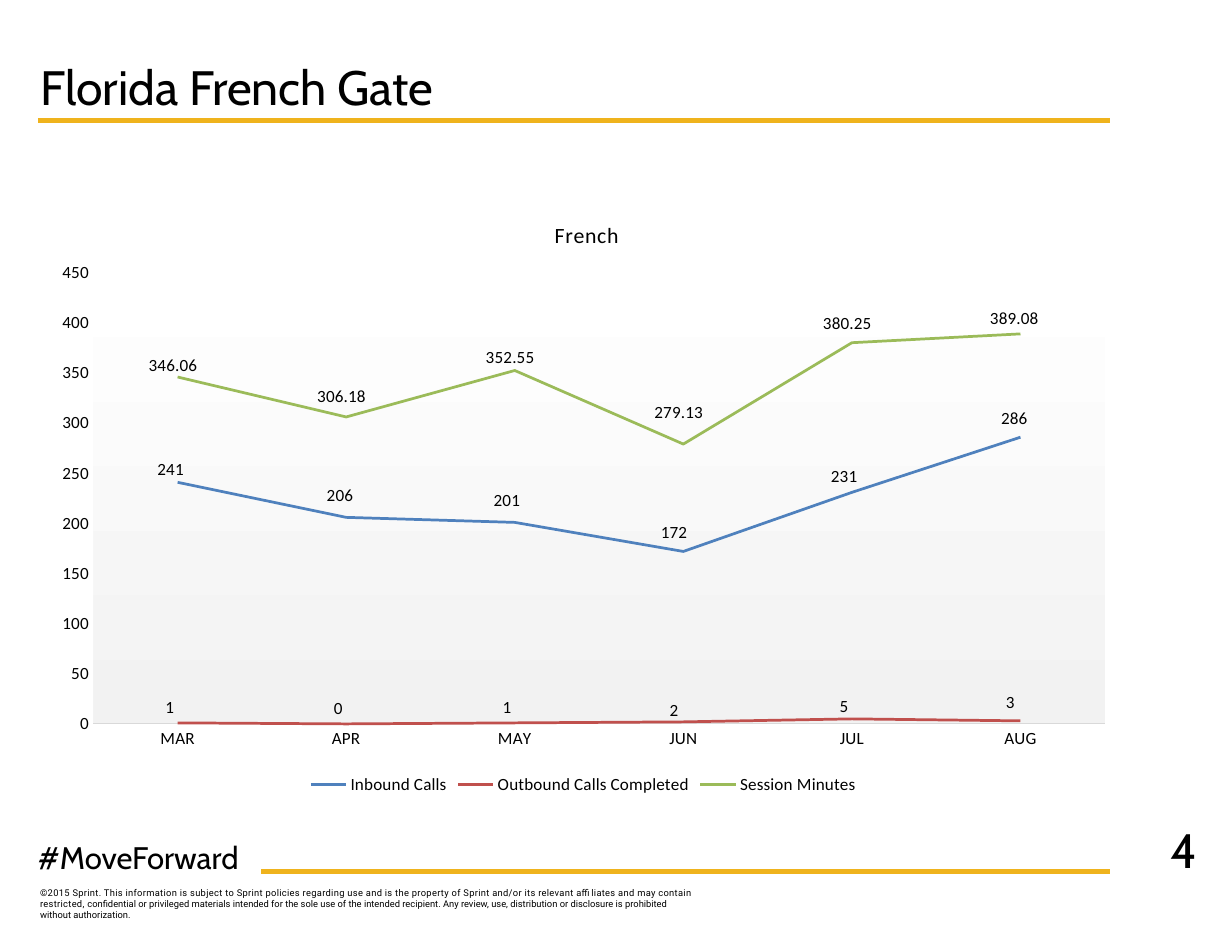
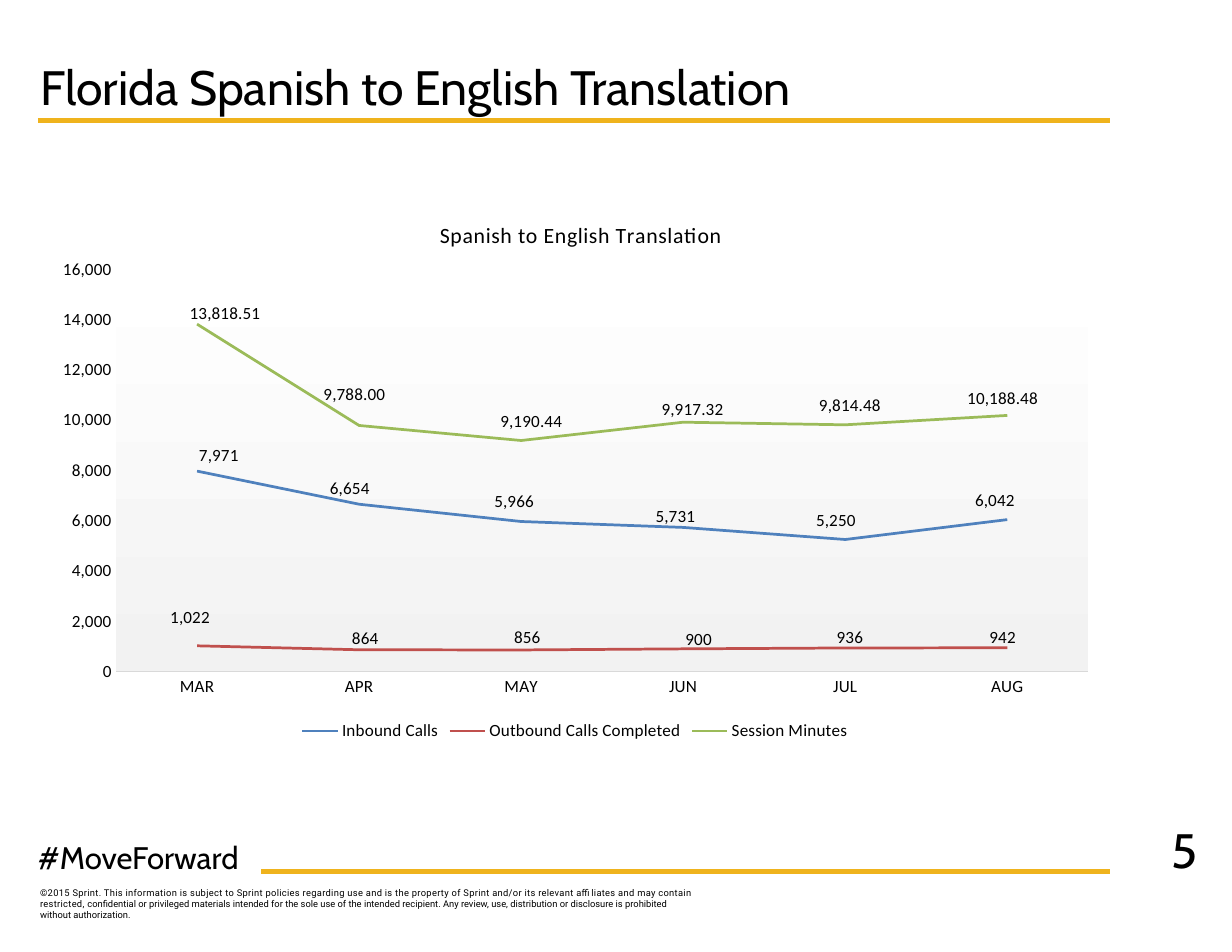
from dataclasses import dataclass
from typing import Optional

import pptx
import pptx.chart.chart
import pptx.chart.data
import pptx.chart.series
import pptx.dml.color
import pptx.enum.chart
import pptx.enum.shapes
import pptx.enum.text
import pptx.oxml
import pptx.oxml.ns
import pptx.slide
import pptx.text.text
import pptx.util
from pptx.dml.color import RGBColor
from pptx.util import Cm

# Shared look
GOLD = RGBColor(0xEF, 0xB3, 0x1D)
BLACK = RGBColor(0x00, 0x00, 0x00)
AXIS_GREY = RGBColor(0xD9, 0xD9, 0xD9)
PLOT_TOP = RGBColor(0xFF, 0xFF, 0xFF)
PLOT_BOTTOM = RGBColor(0xF2, 0xF2, 0xF2)
BLUE = RGBColor(0x4F, 0x81, 0xBD)
RED = RGBColor(0xC0, 0x50, 0x4D)
GREEN = RGBColor(0x9B, 0xBB, 0x59)
HEADING_FONT, CHART_FONT, LEGAL_FONT = "Cabin", "Calibri", "Roboto"

MONTHS = ["MAR", "APR", "MAY", "JUN", "JUL", "AUG"]
HASHTAG = "#MoveForward"
COPYRIGHT_START = (
    "©2015 Sprint. This information is subject to Sprint policies regarding use and is the "
    "property of Sprint and/or its relevant affiliates and may contain restricted, "
)
COPYRIGHT_END = (
    "confidential or privileged materials intended for the sole use of the intended recipient. "
    "Any review, use, distribution or disclosure is prohibited without authorization."
)


@dataclass(frozen=True)
class Box:
    left: float
    top: float
    width: float
    height: float

    def lengths(self) -> tuple[Cm, Cm, Cm, Cm]:
        return Cm(self.left), Cm(self.top), Cm(self.width), Cm(self.height)


@dataclass(frozen=True)
class Rule:
    left: float
    right: float
    top: float


@dataclass(frozen=True)
class Measure:
    """One line; label shifts are points right and down from each data point."""
    values: list[float]
    label_shifts: list[tuple[float, float]]


@dataclass(frozen=True)
class Report:
    number: int
    title: str
    chart_title: str
    chart_box: Box
    title_corner: tuple[float, float]  # fractions of the chart
    plot: Box  # fractions of the chart
    axis_maximum: int
    axis_step: int
    measures: list[Measure]


# Name, colour and number format of each line, in drawing order
LINE_STYLES = [
    ("Inbound Calls", BLUE, "#,##0"),
    ("Outbound Calls Completed", RED, "#,##0"),
    ("Session Minutes", GREEN, "#,##0.00"),
]
RULES = [Rule(0.86, 25.17, 2.74), Rule(5.92, 25.17, 19.76)]
TITLE_BOX = Box(0.91, 0.61, 24.26, 2.01)
NUMBER_BOX = Box(23.93, 18.67, 3.51, 1.19)
COPYRIGHT_BOX = Box(0.71, 20.02, 15.24, 0.97)
HASHTAG_BOX = Box(0.66, 18.92, 15.24, 1.07)

REPORTS = [
    Report(
        4, "Florida French Gate", "French", Box(0.91, 4.34, 24.64, 13.79),
        (0.47, 0.04), Box(0.049, 0.134, 0.931, 0.742), 450, 50,
        [
            Measure([241, 206, 201, 172, 231, 286],
                    [(-4.5, -8), (-4, -14), (-5, -14), (-6, -12), (-5, -10), (-4, -12)]),
            Measure([1, 0, 1, 2, 5, 3],
                    [(-5, -10), (-5, -10), (-5, -10), (-6, -7), (-5, -8), (-6.5, -12)]),
            Measure([346.06, 306.18, 352.55, 279.13, 380.25, 389.08],
                    [(-3, -7), (-3, -13), (-3, -8), (-3, -20), (-3, -12), (-4, -10)]),
        ],
    ),
    Report(
        5, "Florida Spanish to English Translation", "Spanish to English Translation",
        Box(0.91, 4.32, 24.26, 12.6),
        (0.37, 0.045), Box(0.071, 0.142, 0.909, 0.724), 16000, 2000,
        [
            Measure([7971, 6654, 5966, 5731, 5250, 6042],
                    [(14, -10), (-6, -10), (-4.5, -13), (-5, -7), (-6, -12), (-8, -12)]),
            Measure([1022, 864, 856, 900, 936, 942],
                    [(-4.5, -18), (4, -7), (4, -8), (10, -6), (3, -6.5), (-3, -6.5)]),
            Measure([13818.51, 9788, 9190.44, 9917.32, 9814.48, 10188.48],
                    [(18, -7), (-3, -20), (6.5, -12), (6, -8), (3, -12), (-3, -11)]),
        ],
    ),
]


def format_run(run: pptx.text.text._Run, size: float, font_name: str, spacing: int = 0) -> None:
    run.font.size = pptx.util.Pt(size)
    run.font.name = font_name
    run.font.color.rgb = BLACK
    if spacing:
        run._r.get_or_add_rPr().set("spc", str(spacing))


def set_margins(text_frame: pptx.text.text.TextFrame, across: float, down: float) -> None:
    text_frame.margin_left = text_frame.margin_right = Cm(across)
    text_frame.margin_top = text_frame.margin_bottom = Cm(down)


def add_text(slide: pptx.slide.Slide, box: Box, text: str, size: float,
             font_name: str) -> pptx.text.text.TextFrame:
    text_frame = slide.shapes.add_textbox(*box.lengths()).text_frame
    text_frame.word_wrap = True
    set_margins(text_frame, 0.2, 0.1)
    text_frame.text = text
    format_run(text_frame.paragraphs[0].runs[0], size, font_name)
    return text_frame


def add_rule(slide: pptx.slide.Slide, rule: Rule) -> None:
    connector = slide.shapes.add_connector(
        pptx.enum.shapes.MSO_CONNECTOR.STRAIGHT,
        Cm(rule.left), Cm(rule.top), Cm(rule.right), Cm(rule.top))
    connector.line.color.rgb = GOLD
    connector.line.width = pptx.util.Pt(3)
    properties = connector._element.spPr
    properties.append(pptx.oxml.parse_xml(
        f"<a:effectLst {pptx.oxml.ns.nsdecls('a')}/>"))


def add_frame(slide: pptx.slide.Slide, report: Report) -> None:
    """Title, gold rules, footer texts and page number."""
    for rule in RULES:
        add_rule(slide, rule)

    copyright_frame = add_text(slide, COPYRIGHT_BOX, COPYRIGHT_START, 6, LEGAL_FONT)
    paragraph = copyright_frame.paragraphs[0]
    format_run(paragraph.runs[0], 6, LEGAL_FONT, spacing=20)
    ending = paragraph.add_run()
    ending.text = COPYRIGHT_END
    format_run(ending, 6, LEGAL_FONT)

    add_text(slide, HASHTAG_BOX, HASHTAG, 20, HEADING_FONT)

    title = slide.shapes.title
    title.left, title.top, title.width, title.height = TITLE_BOX.lengths()
    title_frame = title.text_frame
    title_frame.text = report.title
    title_frame.auto_size = pptx.enum.text.MSO_AUTO_SIZE.NONE
    title_frame.vertical_anchor = pptx.enum.text.MSO_ANCHOR.BOTTOM
    set_margins(title_frame, 0, 0)
    title_frame.paragraphs[0].alignment = pptx.enum.text.PP_ALIGN.LEFT
    format_run(title_frame.paragraphs[0].runs[0], 31, HEADING_FONT)

    number_frame = add_text(slide, NUMBER_BOX, str(report.number), 31, HEADING_FONT)
    set_margins(number_frame, 0.28, 0.15)
    number_frame.vertical_anchor = pptx.enum.text.MSO_ANCHOR.MIDDLE
    number_frame.paragraphs[0].alignment = pptx.enum.text.PP_ALIGN.RIGHT


def set_layout(element, index: int, x: float, y: float,
               size: Optional[tuple[float, float]] = None, edge: bool = True) -> None:
    """Place a chart part by fractions of the chart."""
    for old_layout in element.xpath("c:layout"):
        element.remove(old_layout)
    entries = []
    if size:
        entries.append(("layoutTarget", "inner"))
    if edge:
        entries += [("xMode", "edge"), ("yMode", "edge")]
    entries += [("x", f"{x:.4f}"), ("y", f"{y:.4f}")]
    if size:
        entries += [("w", size[0]), ("h", size[1])]
    body = "".join(f'<c:{name} val="{value}"/>' for name, value in entries)
    element.insert(index, pptx.oxml.parse_xml(
        f"<c:layout {pptx.oxml.ns.nsdecls('c')}><c:manualLayout>{body}"
        "</c:manualLayout></c:layout>"))


def style_plot(chart: pptx.chart.chart.Chart, plot: Box) -> None:
    plot_area = chart._chartSpace.chart.plotArea
    set_layout(plot_area, 0, plot.left, plot.top, (plot.width, plot.height))
    plot_area.append(pptx.oxml.parse_xml(
        f"<c:spPr {pptx.oxml.ns.nsdecls('c', 'a')}><a:gradFill><a:gsLst>"
        f'<a:gs pos="0"><a:srgbClr val="{PLOT_TOP}"/></a:gs>'
        f'<a:gs pos="100000"><a:srgbClr val="{PLOT_BOTTOM}"/></a:gs>'
        '</a:gsLst><a:lin ang="5400000" scaled="0"/></a:gradFill></c:spPr>'))


def style_axes(chart: pptx.chart.chart.Chart, report: Report) -> None:
    for axis in (chart.category_axis, chart.value_axis):
        axis.has_major_gridlines = False
        axis.major_tick_mark = pptx.enum.chart.XL_TICK_MARK.NONE
        axis.minor_tick_mark = pptx.enum.chart.XL_TICK_MARK.NONE
    chart.category_axis.format.line.color.rgb = AXIS_GREY
    chart.category_axis.format.line.width = pptx.util.Pt(0.75)
    value_axis = chart.value_axis
    value_axis.format.line.fill.background()
    value_axis.minimum_scale = 0
    value_axis.maximum_scale = report.axis_maximum
    value_axis.major_unit = report.axis_step
    value_axis.tick_labels.number_format = "#,##0"
    value_axis.tick_labels.number_format_is_linked = False


def style_series(series: pptx.chart.series.LineSeries, measure: Measure, color: RGBColor,
                 number_format: str, box: Box) -> None:
    series.smooth = False
    series.marker.style = pptx.enum.chart.XL_MARKER_STYLE.NONE
    series.format.line.color.rgb = color
    series.format.line.width = pptx.util.Pt(1.75)

    labels = series.data_labels
    labels.show_value = True
    labels.number_format = number_format
    labels.number_format_is_linked = False
    for index in range(len(measure.values)):
        series.points[index].data_label.position = pptx.enum.chart.XL_LABEL_POSITION.CENTER
    for label, (right, down) in zip(labels._element.xpath("c:dLbl"), measure.label_shifts):
        set_layout(label, 1, right / Cm(box.width).pt, down / Cm(box.height).pt, edge=False)
    for leader_lines in labels._element.xpath("c:showLeaderLines"):
        leader_lines.set("val", "0")


def add_line_chart(slide: pptx.slide.Slide, report: Report) -> None:
    chart_data = pptx.chart.data.CategoryChartData()
    chart_data.categories = MONTHS
    for (name, _, number_format), measure in zip(LINE_STYLES, report.measures):
        chart_data.add_series(name, measure.values, number_format)
    chart = slide.shapes.add_chart(
        pptx.enum.chart.XL_CHART_TYPE.LINE, *report.chart_box.lengths(), chart_data).chart
    chart.font.name = CHART_FONT
    chart.font.size = pptx.util.Pt(11)
    chart.font.color.rgb = BLACK

    # Title and legend
    chart.has_title = True
    title_frame = chart.chart_title.text_frame
    title_frame.text = report.chart_title
    title_run = title_frame.paragraphs[0].runs[0]
    format_run(title_run, 14, CHART_FONT, spacing=30)
    title_run.font.bold = False
    set_layout(chart.chart_title._element, 1, *report.title_corner)
    chart.has_legend = True
    chart.legend.position = pptx.enum.chart.XL_LEGEND_POSITION.BOTTOM
    chart.legend.include_in_layout = False

    # Plot area, axes and lines
    style_plot(chart, report.plot)
    style_axes(chart, report)
    chart.plots[0].vary_by_categories = False
    for series, (_, color, number_format), measure in zip(
            chart.plots[0].series, LINE_STYLES, report.measures):
        style_series(series, measure, color, number_format, report.chart_box)


def main() -> None:
    presentation = pptx.Presentation()
    presentation.slide_width = Cm(27.94)
    presentation.slide_height = Cm(21.59)
    title_only = presentation.slide_layouts[5]
    for report in REPORTS:
        slide = presentation.slides.add_slide(title_only)
        add_frame(slide, report)
        add_line_chart(slide, report)
    presentation.save("out.pptx")


if __name__ == "__main__":
    main()
